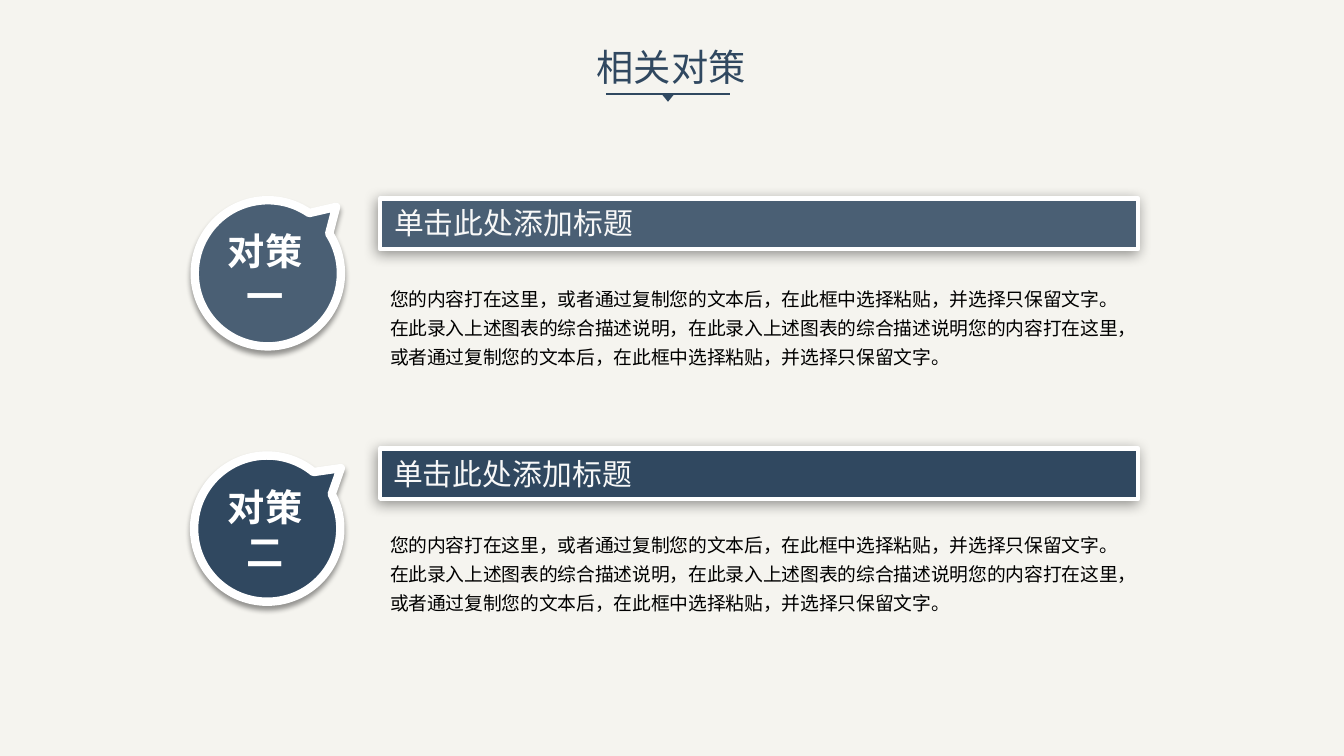
import math

import pptx
import pptx.dml.color
import pptx.enum.shapes
import pptx.enum.text
import pptx.oxml
import pptx.oxml.ns
import pptx.util
from pptx.util import Inches

FONT = "Noto Sans CJK SC"
COLORS = {
    "background": "F5F4EF",
    "navy": "304860",
    "slate": "4A5F74",
    "white": "FFFFFF",
    "heading": "F8F8F8",
    "black": "000000",
}
HEADING = "单击此处添加标题"
DESCRIPTION = (
    "您的内容打在这里，或者通过复制您的文本后，在此框中选择粘贴，并选择只保留文字。"
    "在此录入上述图表的综合描述说明，在此录入上述图表的综合描述说明"
    "您的内容打在这里，或者通过复制您的文本后，在此框中选择粘贴，并选择只保留文字。"
)
# label, colour, bubble top and turn, label top, bar top, heading left and top, description top
MEASURES = [
    ("对策一", "slate", 1.8, 45.8, 2.44, 1.97, 3.81, 1.98, 2.74),
    ("对策二", "navy", 4.34, 50.6, 4.98, 4.45, 3.8, 4.47, 5.18),
]


def rgb(name):
    return pptx.dml.color.RGBColor.from_string(COLORS[name])


def paint(shape, fill, outline=None, width=0):
    shape.shadow.inherit = False
    shape.fill.solid()
    shape.fill.fore_color.rgb = rgb(fill)
    if outline:
        shape.line.color.rgb = rgb(outline)
        shape.line.width = pptx.util.Pt(width)
    else:
        shape.line.fill.background()


def cast_shadow(shape, blur, distance, angle):
    effects = shape._element.spPr.find(pptx.oxml.ns.qn("a:effectLst"))
    effects.append(pptx.oxml.parse_xml(
        f'<a:outerShdw {pptx.oxml.ns.nsdecls("a")} blurRad="{pptx.util.Pt(blur)}" '
        f'dist="{pptx.util.Pt(distance)}" dir="{angle * 60000}" algn="ctr" rotWithShape="0">'
        f'<a:srgbClr val="{COLORS["black"]}"><a:alpha val="40000"/></a:srgbClr></a:outerShdw>'
    ))


def add_text(slide, box, text, size, color, wrap=True):
    frame = slide.shapes.add_textbox(*map(Inches, box)).text_frame
    frame.word_wrap = wrap
    frame.auto_size = pptx.enum.text.MSO_AUTO_SIZE.SHAPE_TO_FIT_TEXT
    paragraph = frame.paragraphs[0]
    run = paragraph.add_run()
    run.text = text
    paragraph.font.size = pptx.util.Pt(size)
    paragraph.font.name = FONT
    paragraph.font.color.rgb = rgb(color)
    properties = run._r.get_or_add_rPr()
    properties.append(properties.makeelement(pptx.oxml.ns.qn("a:ea"), {"typeface": FONT}))
    return frame


def add_title(slide):
    rule = slide.shapes.add_connector(
        pptx.enum.shapes.MSO_CONNECTOR.STRAIGHT,
        Inches(6.01), Inches(0.93), Inches(7.24), Inches(0.93))
    rule.line.color.rgb = rgb("navy")
    rule.line.width = pptx.util.Pt(1.5)
    rule._element.spPr.append(
        pptx.oxml.parse_xml(f'<a:effectLst {pptx.oxml.ns.nsdecls("a")}/>'))
    pointer = slide.shapes.add_shape(
        pptx.enum.shapes.MSO_SHAPE.ISOSCELES_TRIANGLE,
        Inches(6.56), Inches(0.93), Inches(0.13), Inches(0.08))
    pointer.rotation = 180
    paint(pointer, "navy")
    add_text(slide, (5.82, 0.39, 1.68, 0.54), "相关对策", 26.67, "navy", wrap=False)


def add_bar(slide, top, color):
    bar = slide.shapes.add_shape(
        pptx.enum.shapes.MSO_SHAPE.RECTANGLE,
        Inches(3.77), Inches(top), Inches(7.52), Inches(0.5))
    paint(bar, color, "white", 3)
    cast_shadow(bar, 10, 3, 135)


def add_bubble(slide, top, turn, color):
    """Draw a round bubble with its tail upwards, then turn it clockwise by some degrees."""
    center_x, radius, tail_reach, half_gap, arcs = 2.735, 0.725, 0.945, 11.3, 4
    center_y = top + tail_reach
    sweep = math.radians(360 - 2 * half_gap) / arcs
    angles = [math.radians(half_gap - 90) + sweep * i for i in range(arcs + 1)]
    handle = 4 / 3 * math.tan(sweep / 4)

    def rim(angle, along=0):
        """Return a rim point, moved along the tangent by a share of the radius."""
        return (Inches(center_x + radius * (math.cos(angle) - along * math.sin(angle))),
                Inches(center_y + radius * (math.sin(angle) + along * math.cos(angle))))

    builder = slide.shapes.build_freeform(Inches(center_x), Inches(top))
    builder.add_line_segments([rim(angle) for angle in angles], close=True)
    bubble = builder.convert_to_shape()

    sides = list(bubble._element.spPr.iter(pptx.oxml.ns.qn("a:lnTo")))[1:]
    for side, start, end in zip(sides, angles, angles[1:]):
        controls = (rim(start, handle), rim(end, -handle), rim(end))
        points = "".join(
            f'<a:pt x="{x - bubble.left}" y="{y - bubble.top}"/>' for x, y in controls)
        curve = pptx.oxml.parse_xml(
            f'<a:cubicBezTo {pptx.oxml.ns.nsdecls("a")}>{points}</a:cubicBezTo>')
        side.getparent().replace(side, curve)

    bubble.rotation = turn
    paint(bubble, color, "white", 6)
    cast_shadow(bubble, 4, 3, 90)


def add_label(slide, top, text):
    frame = add_text(slide, (2.16, top, 0.94, 0.54), text, 26.67, "white", wrap=False)
    frame.vertical_anchor = pptx.enum.text.MSO_ANCHOR.MIDDLE
    frame.paragraphs[0].alignment = pptx.enum.text.PP_ALIGN.CENTER
    frame.paragraphs[0].runs[0].font.bold = True


def add_measure(slide, label, color, bubble_top, turn, label_top, bar_top,
                heading_left, heading_top, description_top):
    add_bar(slide, bar_top, color)
    add_text(slide, (heading_left, heading_top, 6.05, 0.46), HEADING, 21.33, "heading")
    description = add_text(
        slide, (3.77, description_top, 7.51, 0.97), DESCRIPTION, 13.33, "black")
    description.paragraphs[0].line_spacing = 1.3
    add_bubble(slide, bubble_top, turn, color)
    add_label(slide, label_top, label)


def main():
    deck = pptx.Presentation()
    deck.slide_width, deck.slide_height = Inches(13.33), Inches(7.5)
    slide = deck.slides.add_slide(deck.slide_layouts[6])
    slide.background.fill.solid()
    slide.background.fill.fore_color.rgb = rgb("background")
    add_title(slide)
    for measure in MEASURES:
        add_measure(slide, *measure)
    deck.save("out.pptx")


if __name__ == "__main__":
    main()
